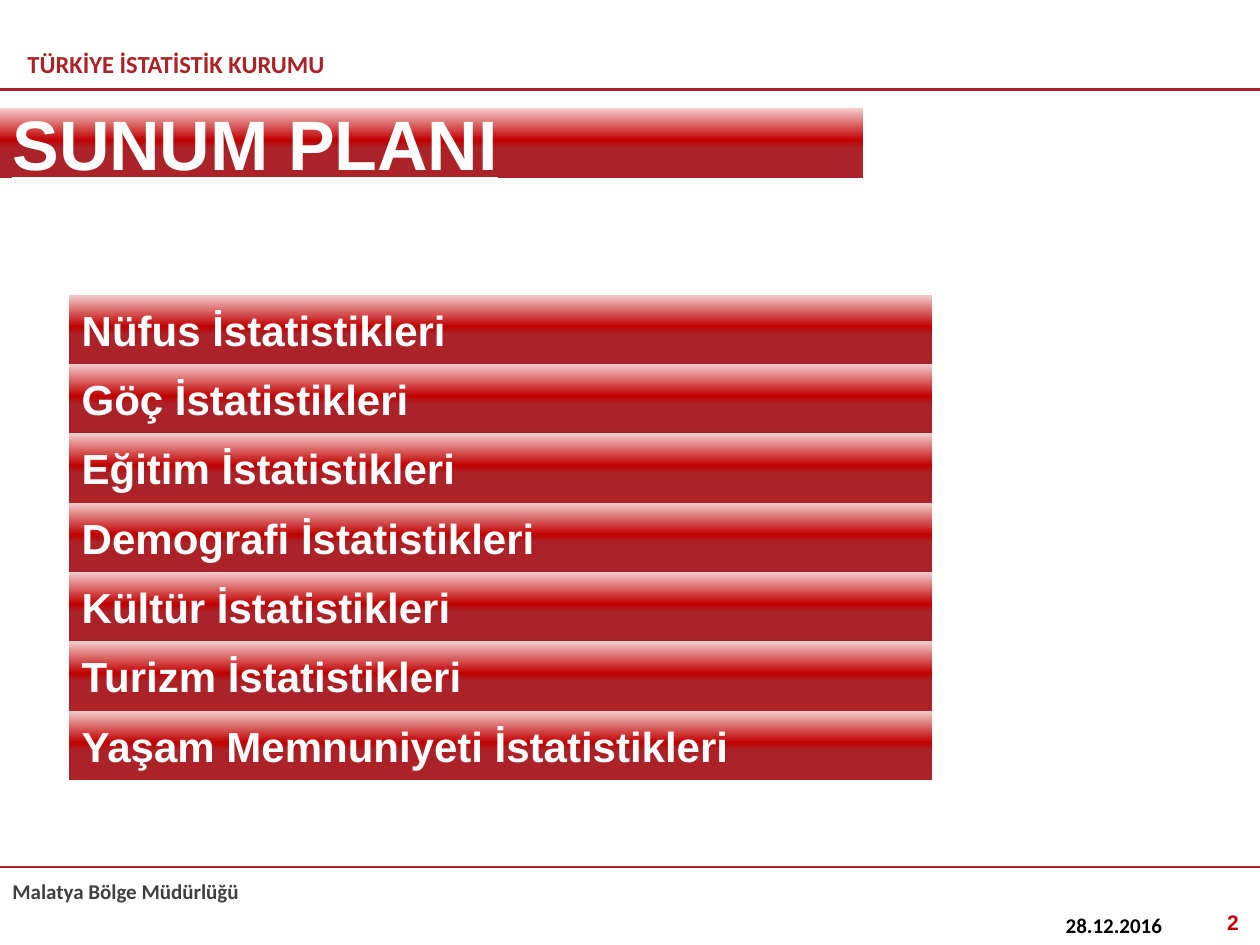
from dataclasses import dataclass

from lxml.etree import SubElement
from pptx import Presentation
from pptx.dml.color import RGBColor
from pptx.enum.shapes import MSO_CONNECTOR as Connector, MSO_SHAPE as Shape
from pptx.enum.text import MSO_ANCHOR as Anchor, PP_ALIGN as Align
from pptx.oxml.ns import qn
from pptx.util import Inches, Pt

WIDTH, HEIGHT = 10, 7.5
COLORS = {
    "brick": "AB2328", "red": "C00000", "blush": "F5CDCE",
    "white": "FFFFFF", "grey": "404040", "black": "000000",
}
BAND_STOPS = ((0, "blush"), (46, "red"), (57, "brick"))
BAND_WIDTH, BAND_HEIGHT = 6.85, 0.55
LIST_LEFT, LIST_TOP = 0.55, 2.34
TOPICS = (
    "Nüfus İstatistikleri", "Göç İstatistikleri", "Eğitim İstatistikleri",
    "Demografi İstatistikleri", "Kültür İstatistikleri",
    "Turizm İstatistikleri", "Yaşam Memnuniyeti İstatistikleri",
)


@dataclass
class Label:
    text: str
    left: float
    top: float
    width: float
    height: float
    size: float
    color: str
    font: str = "Calibri"
    align: Align = Align.LEFT
    anchor: Anchor = Anchor.TOP
    underline: bool = False


def write(shape, label: Label):
    """Put the label's text in a shape and return its run."""
    frame = shape.text_frame
    frame.word_wrap = True
    frame.vertical_anchor = label.anchor
    frame.text = label.text
    paragraph = frame.paragraphs[0]
    paragraph.alignment = label.align
    run = paragraph.runs[0]
    run.font.name, run.font.size, run.font.bold = label.font, Pt(label.size), True
    if label.underline:
        run.font.underline = True
    run.font.color.rgb = RGBColor.from_string(COLORS[label.color])
    return run


def box(label: Label) -> list:
    return [Inches(v) for v in (label.left, label.top, label.width, label.height)]


def add_label(slide, label: Label):
    text_box = slide.shapes.add_textbox(*box(label))
    if label.anchor == Anchor.BOTTOM:
        text_box.text_frame.margin_bottom = 0
    return write(text_box, label)


def add_band(slide, text: str, left: float, top: float, size: float,
             underline: bool = False) -> None:
    label = Label(text, left, top, BAND_WIDTH, BAND_HEIGHT, size, "white", "Arial",
                  anchor=Anchor.MIDDLE, underline=underline)
    band = slide.shapes.add_shape(Shape.RECTANGLE, *box(label))
    band.shadow.inherit = False
    band.line.fill.background()
    band.fill.gradient()
    band.fill.gradient_angle = 270
    stops = band.fill._xPr.find(qn("a:gradFill")).find(qn("a:gsLst"))
    for stop in list(stops):
        stops.remove(stop)
    for percent, color in BAND_STOPS:
        stop = SubElement(stops, qn("a:gs"), pos=str(percent * 1000))
        SubElement(stop, qn("a:srgbClr"), val=COLORS[color])
    write(band, label)


def add_rule(slide, top: float) -> None:
    rule = slide.shapes.add_connector(
        Connector.STRAIGHT, 0, Inches(top), Inches(WIDTH), Inches(top))
    rule.line.color.rgb = RGBColor.from_string(COLORS["brick"])
    rule.line.width = Pt(1.5)
    SubElement(rule._element.spPr, qn("a:effectLst"))


def outline(run, color: str, width: float) -> None:
    properties = run.font._element
    line = SubElement(properties, qn("a:ln"), w=str(Pt(width)))
    fill = SubElement(line, qn("a:solidFill"))
    SubElement(fill, qn("a:srgbClr"), val=COLORS[color])
    properties.insert(0, line)


def main() -> None:
    deck = Presentation()
    deck.slide_width, deck.slide_height = Inches(WIDTH), Inches(HEIGHT)
    slide = deck.slides.add_slide(deck.slide_layouts[6])

    # Header and footer
    add_label(slide, Label("TÜRKİYE İSTATİSTİK KURUMU", 0.12, 0.19, 3.54, 0.43,
                           14, "brick", anchor=Anchor.BOTTOM))
    add_label(slide, Label("Malatya Bölge Müdürlüğü", 0, 6.92, 4.29, 0.52, 12, "grey"))
    for top in (0.71, 6.88):
        add_rule(slide, top)
    add_label(slide, Label("28.12.2016", 8.36, 7.19, 2.33, 0.52, 12, "black"))
    page_number = add_label(slide, Label("2", 7.6, 7.17, 2.33, 0.52, 12, "red",
                                         "Arial", Align.RIGHT))
    outline(page_number, "brick", 0.75)

    # Title and topic list
    add_band(slide, "SUNUM PLANI", 0, 0.86, 40, underline=True)
    for row, topic in enumerate(TOPICS):
        add_band(slide, topic, LIST_LEFT, LIST_TOP + row * BAND_HEIGHT, 24)

    deck.save("out.pptx")


if __name__ == "__main__":
    main()
